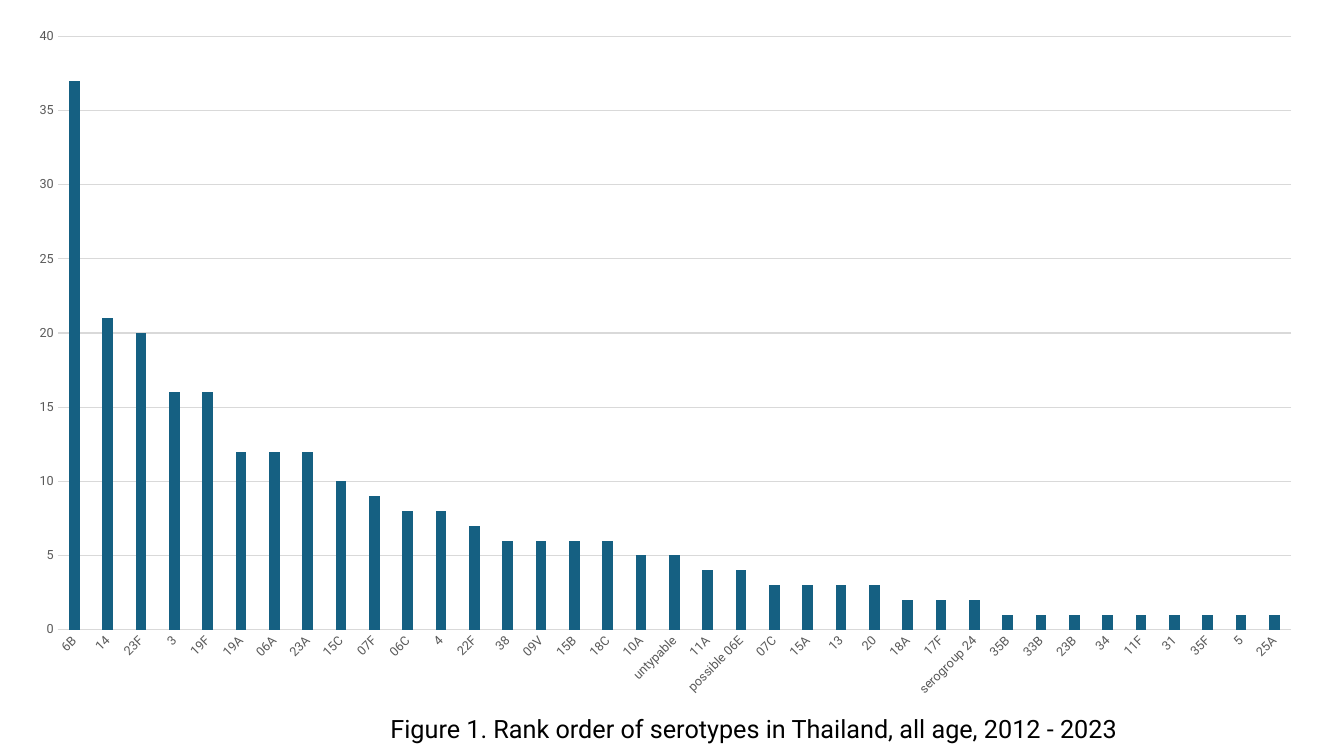
from dataclasses import dataclass

from pptx import Presentation
from pptx.chart.data import CategoryChartData
from pptx.dml.color import RGBColor
from pptx.enum.chart import XL_CHART_TYPE, XL_TICK_MARK
from pptx.enum.text import MSO_ANCHOR, MSO_AUTO_SIZE, PP_ALIGN
from pptx.util import Inches, Pt


@dataclass(frozen=True)
class Theme:
    font: str = "Roboto"
    text: str = "000000"
    label: str = "595959"
    grid: str = "D9D9D9"
    bar: str = "156082"
    caption_size: int = 18
    chart_size: int = 10
    label_size: int = 9
    line_width: float = 0.75


COUNTS = {
    "6B": 37, "14": 21, "23F": 20, "3": 16, "19F": 16, "19A": 12,
    "06A": 12, "23A": 12, "15C": 10, "07F": 9, "06C": 8, "4": 8,
    "22F": 7, "38": 6, "09V": 6, "15B": 6, "18C": 6, "10A": 5,
    "untypable": 5, "11A": 4, "possible 06E": 4, "07C": 3, "15A": 3,
    "13": 3, "20": 3, "18A": 2, "17F": 2, "serogroup 24": 2, "35B": 1,
    "33B": 1, "23B": 1, "34": 1, "11F": 1, "31": 1, "35F": 1, "5": 1,
    "25A": 1,
}


class SlideBuilder:
    def __init__(self, prs, theme):
        self.prs = prs
        self.theme = theme
        self.s = prs.slides.add_slide(prs.slide_layouts[5])

    def box(self, x, y, w, h):
        width, height = self.prs.slide_width, self.prs.slide_height
        return int(x * width), int(y * height), int(w * width), int(h * height)

    def style_font(self, font, size, color):
        font.name = self.theme.font
        font.size = Pt(size)
        font.color.rgb = RGBColor.from_string(color)

    def style_line(self, line):
        line.color.rgb = RGBColor.from_string(self.theme.grid)
        line.width = Pt(self.theme.line_width)

    def caption(self, text, *shares):
        sp = self.s.shapes.title
        sp.left, sp.top, sp.width, sp.height = self.box(*shares)
        tf = sp.text_frame
        tf.text = text
        tf.word_wrap = True
        tf.auto_size = MSO_AUTO_SIZE.SHAPE_TO_FIT_TEXT
        tf.vertical_anchor = MSO_ANCHOR.TOP
        p = tf.paragraphs[0]
        p.alignment = PP_ALIGN.LEFT
        self.style_font(p.font, self.theme.caption_size, self.theme.text)

    def column_chart(self, counts, *shares):
        data = CategoryChartData()
        data.categories = list(counts)
        data.add_series("Series 1", list(counts.values()))
        chart = self.s.shapes.add_chart(
            XL_CHART_TYPE.COLUMN_CLUSTERED, *self.box(*shares), data
        ).chart
        chart.has_title = False
        chart.has_legend = False
        self.style_font(chart.font, self.theme.chart_size, self.theme.text)

        plot = chart.plots[0]
        plot.gap_width = 219
        plot.overlap = -27
        plot.vary_by_categories = False
        fill = plot.series[0].format.fill
        fill.solid()
        fill.fore_color.rgb = RGBColor.from_string(self.theme.bar)

        serotypes, cases = chart.category_axis, chart.value_axis
        for axis in (serotypes, cases):
            axis.major_tick_mark = axis.minor_tick_mark = XL_TICK_MARK.NONE
            self.style_font(axis.tick_labels.font, self.theme.label_size, self.theme.label)
        self.style_line(serotypes.format.line)
        serotypes._element.txPr.bodyPr.set("rot", str(-45 * 60000))
        cases.minimum_scale, cases.maximum_scale, cases.major_unit = 0, 40, 5
        cases.format.line.fill.background()
        cases.has_major_gridlines = True
        self.style_line(cases.major_gridlines.format.line)


def main():
    prs = Presentation()
    prs.slide_width, prs.slide_height = Inches(13.33), Inches(7.5)
    slide = SlideBuilder(prs, Theme())
    margin = 0.01
    slide.column_chart(COUNTS, margin, 0.02, 0.97, 0.92)
    slide.caption(
        "Figure 1. Rank order of serotypes in Thailand, all age, 2012 - 2023",
        0.283, 0.937, 0.568, 0.053,
    )
    prs.save("out.pptx")


if __name__ == "__main__":
    main()
